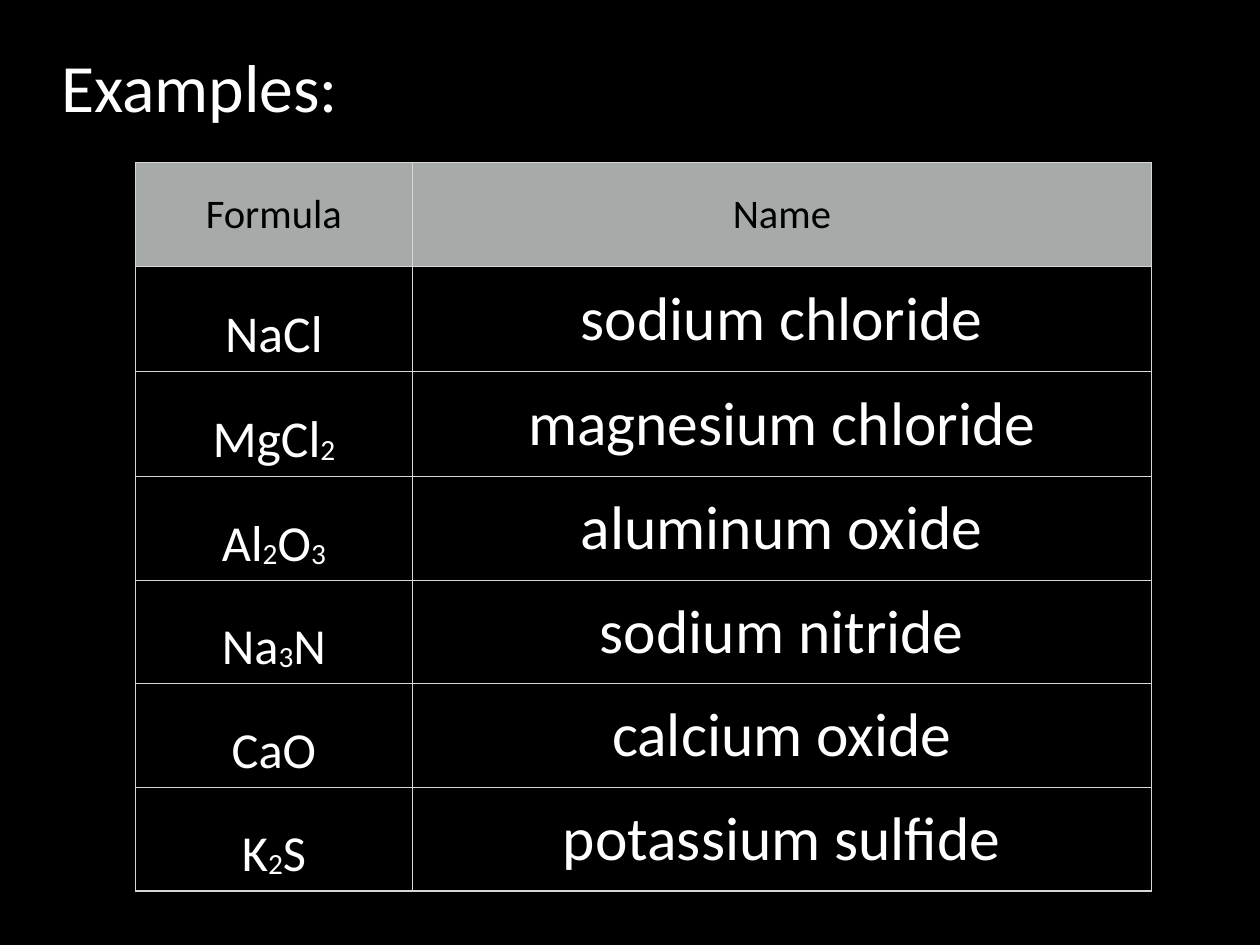
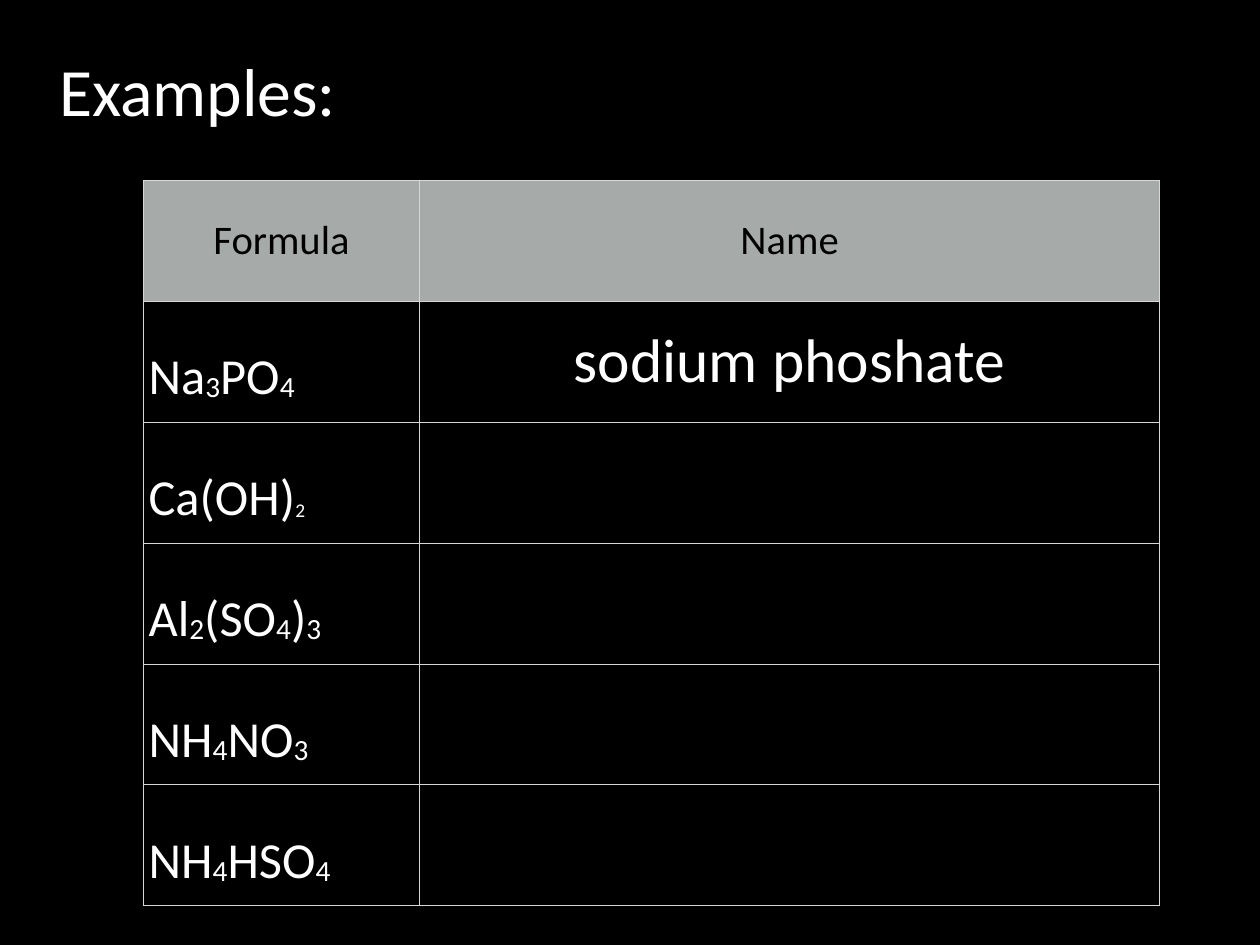
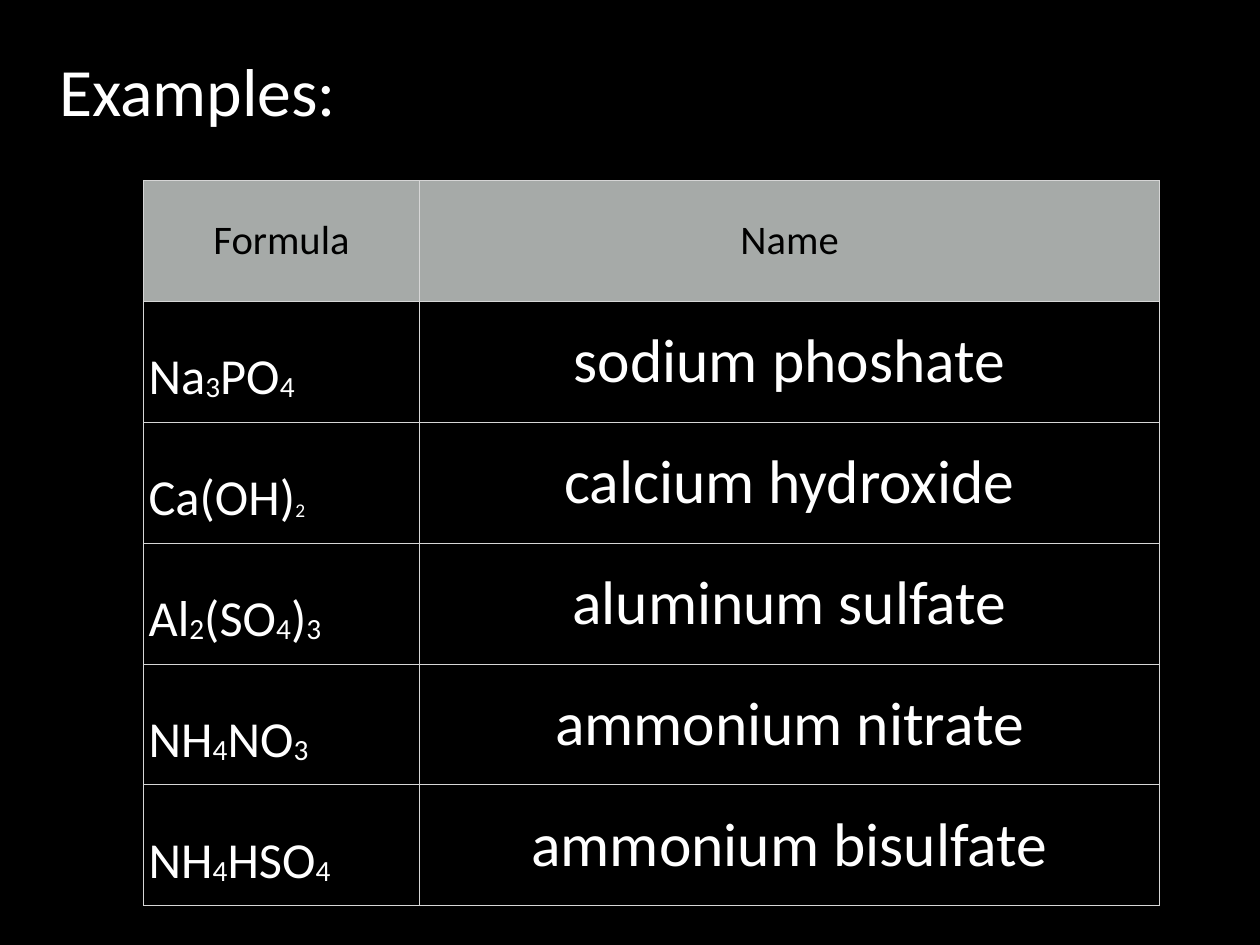
from dataclasses import dataclass
from itertools import groupby

from lxml import etree
from pptx import Presentation
from pptx.dml.color import RGBColor
from pptx.enum import text
from pptx.oxml.ns import qn
from pptx.util import Cm, Pt


@dataclass(frozen=True)
class Theme:
    font: str = "Calibri"
    background: str = "000000"
    ink: str = "FFFFFF"
    header_fill: str = "A6AAA8"
    header_ink: str = "000000"
    border: str = "D6D6D6"
    title_size: float = 55
    header_size: float = 33
    formula_size: float = 41
    name_size: float = 50
    inset: float = 0.15


@dataclass(frozen=True)
class Box:
    left: float
    top: float
    width: float
    height: float


@dataclass(frozen=True)
class Compound:
    formula: str
    name: str = ""
    size: float = 41
    subscript_size: float = 41


THEME = Theme()
FORMULA_SHARE = 0.272
CENTER = text.PP_ALIGN.CENTER
LEFT = text.PP_ALIGN.LEFT

BINARY = [
    Compound("NaCl", "sodium chloride", size=42),
    Compound("MgCl2", "magnesium chloride", size=42),
    Compound("Al2O3", "aluminum oxide"),
    Compound("Na3N", "sodium nitride"),
    Compound("CaO", "calcium oxide"),
    Compound("K2S", "potassium sulfide"),
]
POLYATOMIC = [
    Compound("Na3PO4", "sodium phoshate"),
    Compound("Ca(OH)2", "calcium hydroxide", subscript_size=27.3),
    Compound("Al2(SO4)3", "aluminum sulfate"),
    Compound("NH4NO3", "ammonium nitrate"),
    Compound("NH4HSO4", "ammonium bisulfate"),
]
QUESTIONS = POLYATOMIC[:1] + [
    Compound(item.formula, size=item.size, subscript_size=item.subscript_size)
    for item in POLYATOMIC[1:]
]


def format_span(span, size, color):
    span.font.name = THEME.font
    span.font.size = Pt(size)
    span.font.bold = False
    span.font.color.rgb = RGBColor.from_string(color)


def set_insets(target):
    for side in ("left", "top", "right", "bottom"):
        setattr(target, f"margin_{side}", Cm(THEME.inset))


def add_title(page, wording, box):
    title = page.shapes.title
    title.left, title.top = Cm(box.left), Cm(box.top)
    title.width, title.height = Cm(box.width), Cm(box.height)
    frame = title.text_frame
    frame.text = wording
    frame.word_wrap = True
    frame.auto_size = text.MSO_AUTO_SIZE.NONE
    frame.vertical_anchor = text.MSO_ANCHOR.MIDDLE
    set_insets(frame)
    para = frame.paragraphs[0]
    para.alignment = LEFT
    format_span(para.runs[0], THEME.title_size, THEME.ink)


def style_cell(cell, fill):
    cell.vertical_anchor = text.MSO_ANCHOR.MIDDLE
    set_insets(cell)
    properties = cell._tc.get_or_add_tcPr()
    for side in ("lnL", "lnR", "lnT", "lnB"):
        line = etree.SubElement(properties, qn(f"a:{side}"), w=str(Pt(1)))
        solid = etree.SubElement(line, qn("a:solidFill"))
        etree.SubElement(solid, qn("a:srgbClr"), val=THEME.border)
    cell.fill.solid()
    cell.fill.fore_color.rgb = RGBColor.from_string(fill)


def write_label(cell, wording, size, color):
    para = cell.text_frame.paragraphs[0]
    para.text = wording
    para.alignment = CENTER
    for span in para.runs:
        format_span(span, size, color)


def write_formula(cell, compound, alignment):
    para = cell.text_frame.paragraphs[0]
    para.alignment = alignment
    para.line_spacing = 1.5
    for is_subscript, symbols in groupby(compound.formula, str.isdigit):
        span = para.add_run()
        span.text = "".join(symbols)
        size = compound.subscript_size if is_subscript else compound.size
        format_span(span, size, THEME.ink)
        if is_subscript:
            span.font._element.set("baseline", "-6000")


def add_compound_table(page, compounds, box, alignment):
    count = len(compounds) + 1
    table = page.shapes.add_table(
        count, 2, Cm(box.left), Cm(box.top), Cm(box.width), Cm(box.height)
    ).table
    table.first_row = table.horz_banding = False
    for column, share in zip(table.columns, (FORMULA_SHARE, 1 - FORMULA_SHARE)):
        column.width = Cm(box.width * share)
    for index, row in enumerate(table.rows):
        row.height = Cm(box.height / count)
        for cell in row.cells:
            style_cell(cell, THEME.background if index else THEME.header_fill)
    for cell, wording in zip(table.rows[0].cells, ("Formula", "Name")):
        write_label(cell, wording, THEME.header_size, THEME.header_ink)
    for index, compound in enumerate(compounds, start=1):
        write_formula(table.cell(index, 0), compound, alignment)
        if compound.name:
            write_label(table.cell(index, 1), compound.name, THEME.name_size, THEME.ink)


def add_examples_page(deck, compounds, title_box, table_box, alignment):
    page = deck.slides.add_slide(deck.slide_layouts.get_by_name("Title Only"))
    add_compound_table(page, compounds, table_box, alignment)
    add_title(page, "Examples:", title_box)


def main():
    deck = Presentation()
    deck.slide_width, deck.slide_height = Cm(36.12), Cm(27.1)
    backdrop = deck.slide_master.background.fill
    backdrop.solid()
    backdrop.fore_color.rgb = RGBColor.from_string(THEME.background)

    add_examples_page(
        deck, BINARY, Box(1.6, 1.2, 16.87, 2.51), Box(3.89, 4.67, 29.13, 20.8), CENTER
    )
    for compounds in (QUESTIONS, POLYATOMIC):
        add_examples_page(
            deck, compounds, Box(1.55, 1.3, 16.87, 2.51), Box(4.11, 5.18, 29.13, 20.8), LEFT
        )
    deck.save("out.pptx")


if __name__ == "__main__":
    main()
